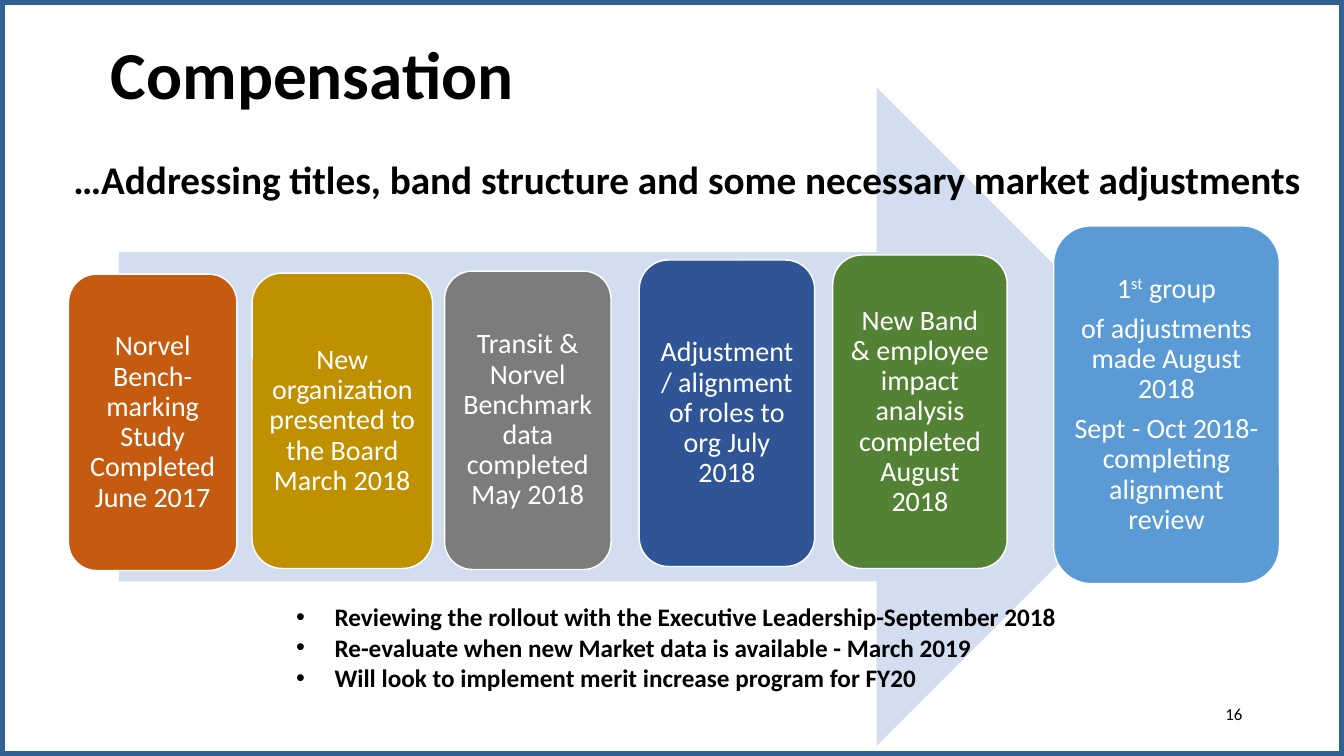
import pptx
import pptx.util
import pptx.dml.color
import pptx.enum.shapes
import pptx.enum.text
from lxml import etree

Inches = pptx.util.Inches
Pt = pptx.util.Pt
RGBColor = pptx.dml.color.RGBColor
Kind = pptx.enum.shapes.MSO_SHAPE
Align = pptx.enum.text.PP_ALIGN
Anchor = pptx.enum.text.MSO_ANCHOR

BLACK = RGBColor(0x00, 0x00, 0x00)
WHITE = RGBColor(0xFF, 0xFF, 0xFF)
FRAME = RGBColor(0x32, 0x61, 0x95)
PALE = RGBColor(0xD2, 0xDE, 0xEF)
ORANGE = RGBColor(0xC5, 0x5A, 0x11)
GOLD = RGBColor(0xBF, 0x90, 0x00)
GRAY = RGBColor(0x7C, 0x7C, 0x7C)
NAVY = RGBColor(0x2F, 0x55, 0x97)
GREEN = RGBColor(0x54, 0x82, 0x35)
BLUE = RGBColor(0x5B, 0x9B, 0xD5)

STEPS = [
    (0.68, 2.72, 1.67, 2.94, ORANGE,
     ["Norvel Bench-marking Study Completed June 2017"]),
    (2.5, 2.71, 1.79, 2.93, GOLD,
     ["New organization presented to the Board March 2018"]),
    (4.41, 2.69, 1.65, 2.96, GRAY,
     ["Transit & Norvel Benchmark data completed May 2018"]),
    (6.34, 2.58, 1.74, 3.04, NAVY,
     ["Adjustment/ alignment of roles to org July 2018"]),
    (8.26, 2.53, 1.73, 3.11, GREEN,
     ["New Band & employee impact analysis completed August 2018"]),
    (10.45, 2.24, 2.24, 3.55, BLUE,
     ["1^st^ group", "of adjustments made August 2018",
      "Sept - Oct 2018- completing alignment review"]),
]
NOTES = [
    "Reviewing the rollout with the Executive Leadership-September 2018",
    "Re-evaluate when new Market data is available - March 2019",
    "Will look to implement merit increase program for FY20",
]


class Page:
    font = "Calibri"
    pad = Inches(0.08)
    hang = Inches(0.38)

    def __init__(self, deck):
        self.slide = deck.slides.add_slide(deck.slide_layouts[6])

    def shape(self, kind, box, fill=None, line=None, width=1):
        item = self.slide.shapes.add_shape(kind, *map(Inches, box))
        item.shadow.inherit = False
        if fill is None:
            item.fill.background()
        else:
            item.fill.solid()
            item.fill.fore_color.rgb = fill
        if line is None:
            item.line.fill.background()
        else:
            item.line.color.rgb = line
            item.line.width = Pt(width)
        return item

    def label(self, frame, lines, size, color, bold=False, align=Align.LEFT):
        frame.word_wrap = True
        for at, line in enumerate(lines):
            para = frame.paragraphs[0] if at == 0 else frame.add_paragraph()
            para.alignment = align
            for turn, part in enumerate(line.split("^")):
                run = para.add_run()
                run.text = part
                run.font.name = self.font
                run.font.size = Pt(size)
                run.font.bold = bold
                run.font.color.rgb = color
                if turn % 2:
                    run._r.get_or_add_rPr().set("baseline", "30000")

    def text(self, box, lines, size, bold=True, align=Align.LEFT):
        item = self.slide.shapes.add_textbox(*map(Inches, box))
        self.label(item.text_frame, lines, size, BLACK, bold, align)
        return item.text_frame

    def step(self, left, top, width, height, fill, lines):
        box = (left, top, width, height)
        frame = self.shape(Kind.ROUNDED_RECTANGLE, box, fill, WHITE).text_frame
        frame.margin_left = frame.margin_right = self.pad
        frame.margin_top = frame.margin_bottom = self.pad
        frame.vertical_anchor = Anchor.MIDDLE
        self.label(frame, lines, 20, WHITE, align=Align.CENTER)
        for para in frame.paragraphs:
            para.line_spacing = 0.9
            para.space_after = Pt(7)

    def bullets(self, box, lines, size):
        frame = self.text(box, lines, size)
        for para in frame.paragraphs:
            props = para._p.get_or_add_pPr()
            props.set("marL", str(self.hang))
            props.set("indent", str(-self.hang))
            space = props.nsmap["a"]
            font = etree.SubElement(props, "{%s}buFont" % space)
            font.set("typeface", "Arial")
            mark = etree.SubElement(props, "{%s}buChar" % space)
            mark.set("char", "•")


def main():
    deck = pptx.Presentation()
    deck.slide_width = Inches(13.33)
    deck.slide_height = Inches(7.5)
    page = Page(deck)
    page.shape(Kind.RECTANGLE, (0, 0, 13.33, 7.5), line=FRAME, width=7)
    page.shape(Kind.RIGHT_ARROW, (1.18, 0.87, 10.78, 6.53), PALE)
    for step in STEPS:
        page.step(*step)
    page.text((1, 0.27, 4.29, 0.91), ["Compensation"], 48)
    page.text((9.42, 6.93, 3, 0.4), ["16"], 12, False, Align.RIGHT)
    page.text(
        (0.63, 1.49, 12.44, 0.57),
        ["…Addressing titles, band structure and some necessary market adjustments"],
        28)
    page.bullets((2.84, 5.92, 10.4, 1.01), NOTES, 18)
    deck.save("out.pptx")


if __name__ == "__main__":
    main()
